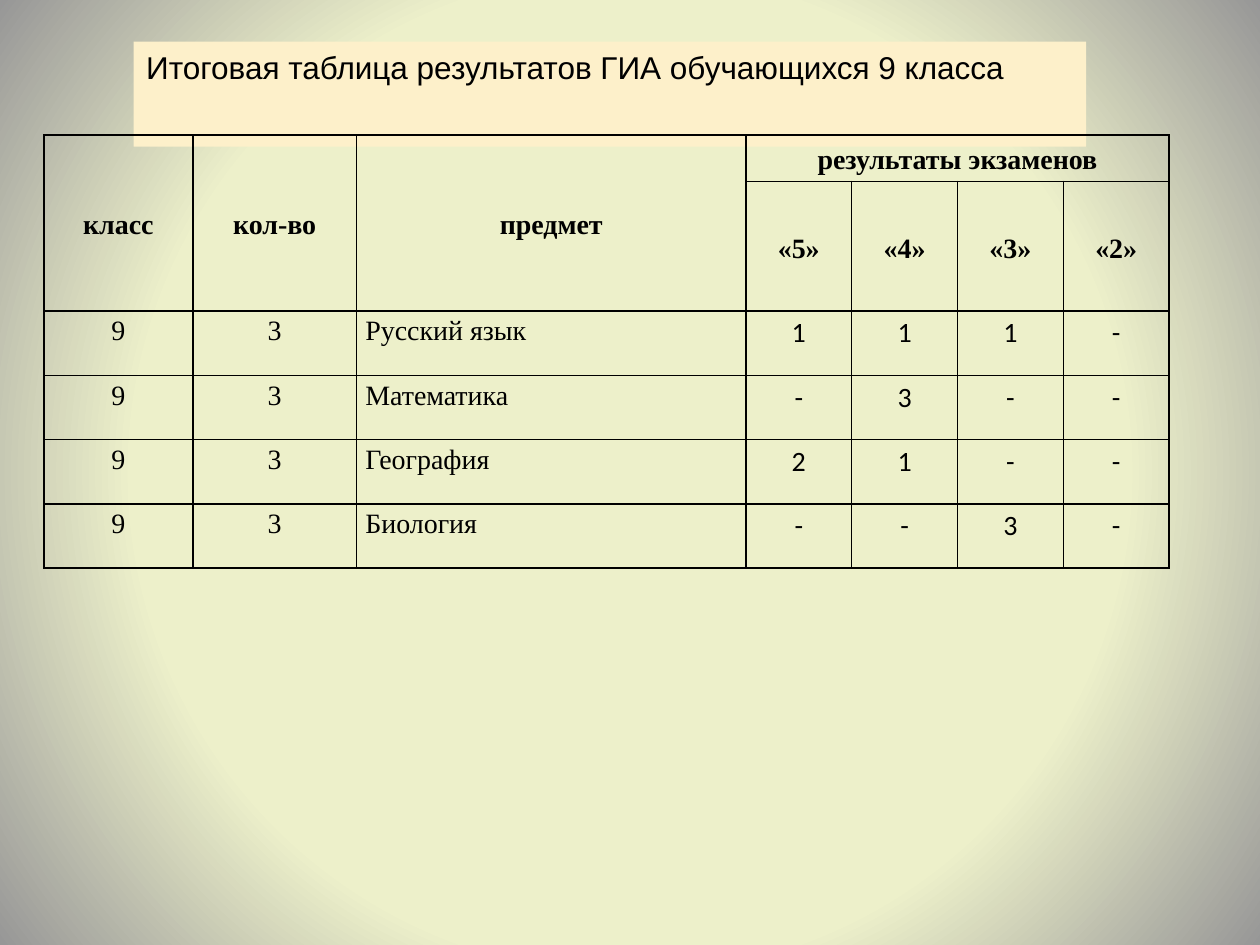
from lxml.etree import SubElement as Sub
from pptx import Presentation
from pptx.dml.color import RGBColor as RGB
from pptx.enum.text import MSO_ANCHOR as Anchor, MSO_AUTO_SIZE as Fit, PP_ALIGN as Align
from pptx.oxml.ns import qn
from pptx.util import Inches, Pt

HUES = {"ink": "000000", "glow": "EDF0CA", "edge": "979797", "band": "FDF0CA"}
COLS = [1.18, 1.3, 3.09] + [0.84] * 4
ROWS = [0.37, 1.03] + [0.51] * 4
SERIF = "Times New Roman"
HEADS = ["класс", "кол-во", "предмет"]
MARKS = ["«5»", "«4»", "«3»", "«2»"]
MARKED = [
    ("Русский язык ", "111-"),
    ("Математика ", "-3--"),
    ("География", "21--"),
    ("Биология", "--3-"),
]


def hue(name):
    return RGB.from_string(HUES[name])


def style(par, face, size, align, bold=False):
    par.alignment = align
    for run in par.runs:
        font = run.font
        font.name, font.size, font.bold = face, Pt(size), bold
        font.color.rgb = hue("ink")


def paint(slide):
    fill = slide.background.fill
    fill.gradient()
    for stop, place, name in zip(fill.gradient_stops, (0.63, 1), ("glow", "edge")):
        stop.position = place
        stop.color.rgb = hue(name)
    line = next(slide.element.iter(qn("a:lin")))
    grad = line.getparent()
    ring = Sub(grad, qn("a:path"), path="circle")
    Sub(ring, qn("a:fillToRect"), l="50000", t="50000", r="50000", b="50000")
    grad.replace(line, ring)


def add_title(slide, text):
    box = slide.shapes.title
    box.left, box.top = Inches(1.06), Inches(0.33)
    box.width, box.height = Inches(7.56), Inches(0.4)
    box.fill.solid()
    box.fill.fore_color.rgb = hue("band")
    frame = box.text_frame
    frame.text = text
    frame.word_wrap = True
    frame.auto_size = Fit.SHAPE_TO_FIT_TEXT
    frame.vertical_anchor = Anchor.TOP
    style(frame.paragraphs[0], "Arial", 18, Align.LEFT)


def frame_cell(cell):
    props = cell._tc.get_or_add_tcPr()
    for side in ("lnL", "lnR", "lnT", "lnB"):
        line = Sub(props, qn("a:" + side), w=str(Pt(1)))
        Sub(Sub(line, qn("a:solidFill")), qn("a:srgbClr"), val=HUES["ink"])
    cell.fill.background()
    cell.margin_left = cell.margin_right = Inches(0.07)
    cell.margin_top = cell.margin_bottom = 0


def fill_cell(cell, text, face=SERIF, align=Align.CENTER, head=False):
    cell.text = text
    cell.vertical_anchor = Anchor.MIDDLE if head else Anchor.TOP
    par = cell.text_frame.paragraphs[0]
    par.line_spacing = 1.15
    style(par, face, 16, align, head)


def add_grid(slide):
    grid = slide.shapes.add_table(
        len(ROWS), len(COLS), Inches(0.35), Inches(1.07),
        Inches(sum(COLS)), Inches(sum(ROWS))).table
    for col, width in zip(grid.columns, COLS):
        col.width = Inches(width)
    for row, height in zip(grid.rows, ROWS):
        row.height = Inches(height)
    for cell in grid.iter_cells():
        frame_cell(cell)
    for col, text in enumerate(HEADS):
        grid.cell(0, col).merge(grid.cell(1, col))
        fill_cell(grid.cell(0, col), text, head=True)
    grid.cell(0, 3).merge(grid.cell(0, 6))
    fill_cell(grid.cell(0, 3), "результаты экзаменов", head=True)
    for col, text in enumerate(MARKS, 3):
        fill_cell(grid.cell(1, col), text, head=True)
    for row, (topic, counts) in enumerate(MARKED, 2):
        fill_cell(grid.cell(row, 0), "9")
        fill_cell(grid.cell(row, 1), "3")
        fill_cell(grid.cell(row, 2), topic, align=Align.JUSTIFY)
        for col, count in enumerate(counts, 3):
            fill_cell(grid.cell(row, col), count, "Calibri")


def main():
    deck = Presentation()
    deck.slide_width, deck.slide_height = Inches(10), Inches(7.5)
    slide = deck.slides.add_slide(deck.slide_layouts[5])
    paint(slide)
    add_grid(slide)
    add_title(slide, "Итоговая таблица результатов ГИА обучающихся 9 класса")
    deck.save("out.pptx")


if __name__ == "__main__":
    main()
